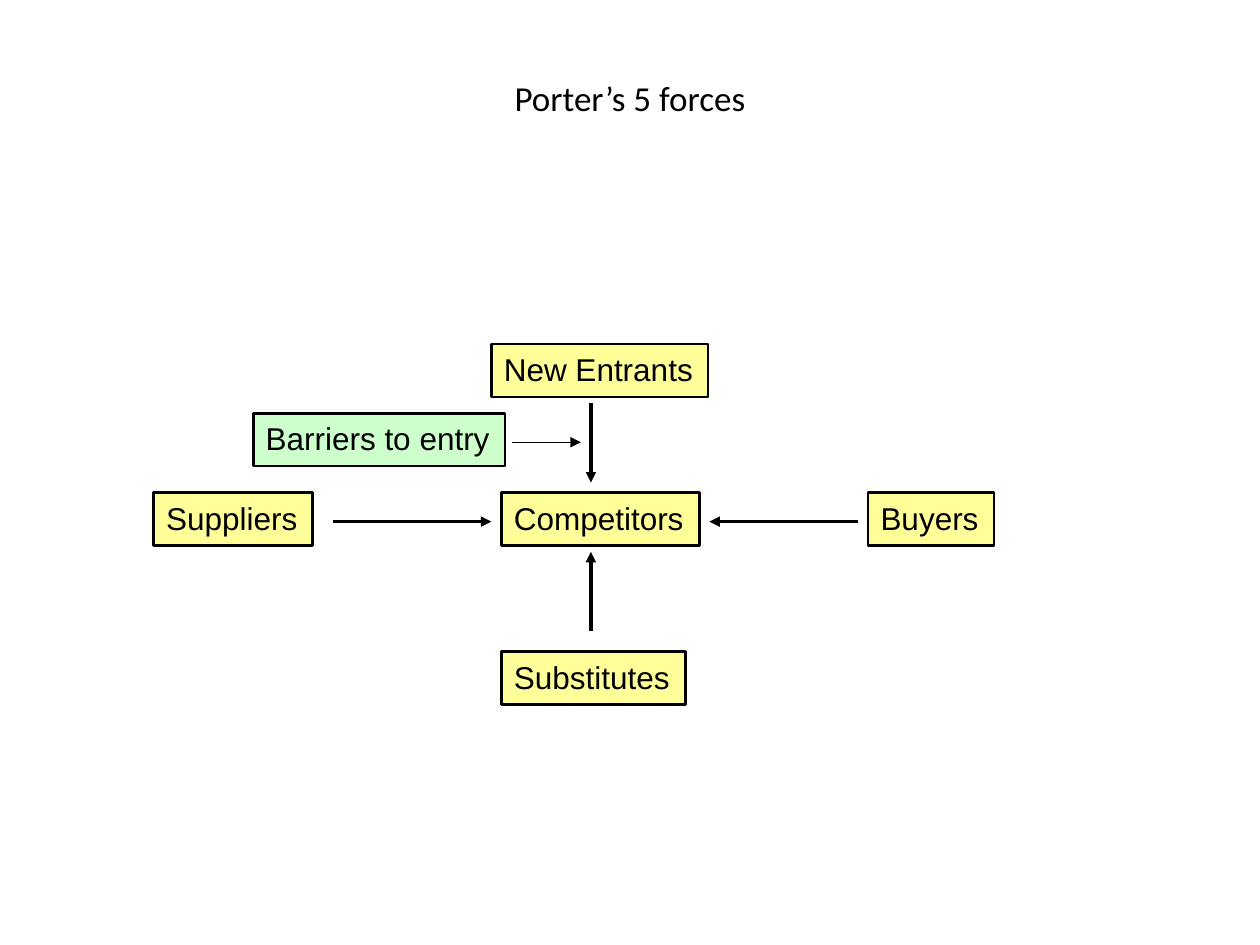
from lxml.etree import SubElement
from pptx import Presentation
from pptx.dml.color import RGBColor
from pptx.enum.shapes import MSO_CONNECTOR, MSO_SHAPE
from pptx.enum.text import MSO_ANCHOR, MSO_AUTO_SIZE, PP_ALIGN
from pptx.oxml.ns import qn
from pptx.util import Inches, Pt

COLORS = {"ink": "000000", "force": "FFFF99", "barrier": "CCFFCC"}
BOX_HEIGHT = 0.42

# Left, top and width in inches within the diagram
FORCES = {
    "New Entrants": (2.68, 0, 1.72),
    "Buyers": (5.67, 1.18, 1),
    "Suppliers": (0, 1.18, 1.26),
    "Competitors": (2.76, 1.18, 1.57),
    "Substitutes": (2.76, 2.44, 1.46),
}
BARRIER = ("Barriers to entry", (0.79, 0.55, 2))

# Start and end in inches within the diagram, each pointing at Competitors
AXIS_X, AXIS_Y = 3.47, 1.41
FORCE_ARROWS = [
    ((1.42, AXIS_Y), (2.68, AXIS_Y)),
    ((AXIS_X, 0.47), (AXIS_X, 1.1)),
    ((AXIS_X, 2.28), (AXIS_X, 1.65)),
    ((5.59, AXIS_Y), (4.41, AXIS_Y)),
]
BARRIER_ARROW = ((2.84, 0.78), (3.39, 0.78))


def color(name):
    return RGBColor.from_string(COLORS[name])


def add_run(paragraph, text, font_name, size):
    run = paragraph.add_run()
    run.text = text
    run.font.name = font_name
    run.font.size = Pt(size)
    run.font.color.rgb = color("ink")


def add_title(slide, left, top, width, height):
    title = slide.shapes.title
    title.left, title.top = Inches(left), Inches(top)
    title.width, title.height = Inches(width), Inches(height)
    frame = title.text_frame
    frame.vertical_anchor = MSO_ANCHOR.MIDDLE
    frame.margin_bottom = Inches(0.35)
    paragraph = frame.paragraphs[0]
    paragraph.alignment = PP_ALIGN.CENTER
    add_run(paragraph, "Porter’s 5 forces", "Calibri", 20)


def add_label_box(slide, text, left, top, width, fill):
    shape = slide.shapes.add_shape(
        MSO_SHAPE.RECTANGLE, Inches(left), Inches(top), Inches(width), Inches(BOX_HEIGHT)
    )
    shape.shadow.inherit = False
    shape.fill.solid()
    shape.fill.fore_color.rgb = color(fill)
    shape.line.color.rgb = color("ink")
    shape.line.width = Pt(1.5)
    frame = shape.text_frame
    frame.word_wrap = False
    frame.auto_size = MSO_AUTO_SIZE.SHAPE_TO_FIT_TEXT
    frame.vertical_anchor = MSO_ANCHOR.TOP
    paragraph = frame.paragraphs[0]
    paragraph.alignment = PP_ALIGN.LEFT
    add_run(paragraph, text, "Arial", 18)


def add_arrow(slide, start, end, weight):
    connector = slide.shapes.add_connector(
        MSO_CONNECTOR.STRAIGHT, *(Inches(value) for value in (*start, *end))
    )
    connector.line.color.rgb = color("ink")
    connector.line.width = Pt(weight)
    SubElement(connector.line._get_or_add_ln(), qn("a:tailEnd"), type="triangle")
    SubElement(connector._element.spPr, qn("a:effectLst"))


def add_forces_diagram(slide, left, top):
    def shift(point):
        return left + point[0], top + point[1]

    for text, (x, y, width) in FORCES.items():
        add_label_box(slide, text, *shift((x, y)), width, "force")
    for start, end in FORCE_ARROWS:
        add_arrow(slide, shift(start), shift(end), 2)

    text, (x, y, width) = BARRIER
    add_label_box(slide, text, *shift((x, y)), width, "barrier")
    start, end = BARRIER_ARROW
    add_arrow(slide, shift(start), shift(end), 0.75)


def main():
    presentation = Presentation()
    presentation.slide_width = Inches(10)
    presentation.slide_height = Inches(7.5)
    title_only = presentation.slide_layouts[5]
    slide = presentation.slides.add_slide(title_only)
    add_title(slide, 0.5, 0.3, 9, 1.25)
    add_forces_diagram(slide, 1.22, 2.73)
    presentation.save("out.pptx")


if __name__ == "__main__":
    main()
